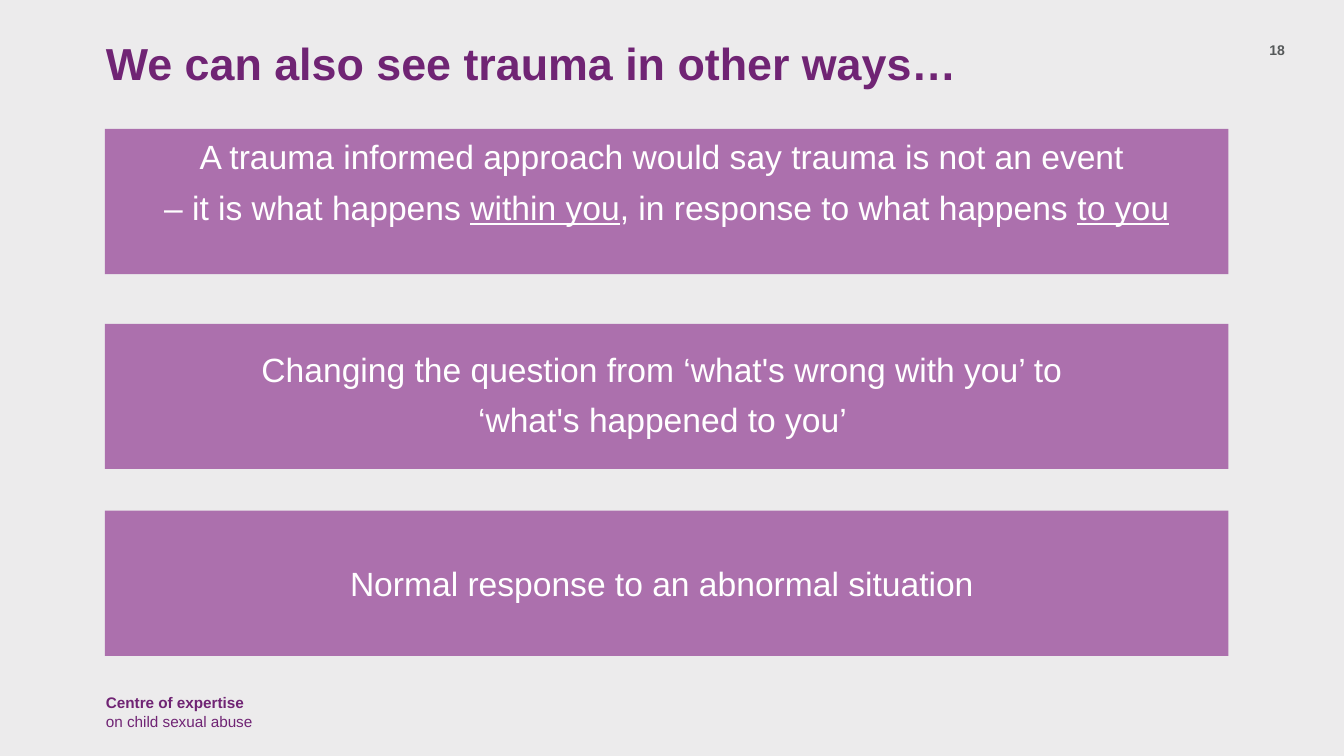
from pptx import Presentation
from pptx.dml.color import RGBColor
from pptx.enum.shapes import MSO_SHAPE
from pptx.enum.text import MSO_ANCHOR, PP_ALIGN
from pptx.util import Inches, Pt

RECT = MSO_SHAPE.RECTANGLE
TOP, MIDDLE = MSO_ANCHOR.TOP, MSO_ANCHOR.MIDDLE
LEFT, CENTER, RIGHT = PP_ALIGN.LEFT, PP_ALIGN.CENTER, PP_ALIGN.RIGHT

COLORS = {
    "background": "ECEBEC",
    "purple": "702474",
    "panel": "AC70AD",
    "grey": "555859",
    "white": "FFFFFF",
}


def rgb(name):
    return RGBColor.from_string(COLORS[name])


def add_run(p, text, size=18, color="white", bold=False, underline=False,
            break_before=False):
    if break_before:
        p.add_line_break()
    r = p.add_run()
    r.text = text
    r.font.name = "Arial"
    r.font.size = Pt(size)
    r.font.bold = bold
    r.font.underline = underline
    r.font.color.rgb = rgb(color)


class SlideBuilder:
    def __init__(self, prs):
        self.s = prs.slides.add_slide(prs.slide_layouts[6])
        self.s.background.fill.solid()
        self.s.background.fill.fore_color.rgb = rgb("background")

    def text(self, box, lines, align=LEFT, spacing=1.0, **style):
        sp = self.s.shapes.add_textbox(*map(Inches, box))
        self.fill_frame(sp.text_frame, lines, align, spacing, TOP, **style)

    def panel(self, top, lines, spacing=0.9, inset_bottom=0.05):
        sp = self.s.shapes.add_shape(
            RECT, Inches(0.78), Inches(top), Inches(8.36), Inches(1.08))
        sp.shadow.inherit = False
        sp.fill.solid()
        sp.fill.fore_color.rgb = rgb("panel")
        sp.line.fill.background()
        self.fill_frame(sp.text_frame, lines, CENTER, spacing, MIDDLE, gap=7.5)
        sp.text_frame.margin_bottom = Inches(inset_bottom)

    def fill_frame(self, tf, lines, align, spacing, anchor, gap=0, **style):
        tf.word_wrap = True
        tf.vertical_anchor = anchor
        for i, line in enumerate(lines):
            p = tf.add_paragraph() if i else tf.paragraphs[0]
            p.alignment = align
            p.line_spacing = spacing
            if i:
                p.space_before = Pt(gap)
            for text, extra in line:
                add_run(p, text, **{**style, **extra})


def main():
    prs = Presentation()
    prs.slide_width = Inches(10)
    prs.slide_height = prs.slide_width * 9 // 16
    slide = SlideBuilder(prs)
    underlined = {"underline": True}

    slide.text((0.69, 5.11, 1.79, 0.38),
               [[("Centre of expertise", {"bold": True}),
                 ("on child sexual abuse", {"break_before": True})]],
               size=8.2, color="purple")
    slide.text((9.15, 0.26, 0.51, 0.26), [[("18", {})]],
               align=RIGHT, size=7.5, color="grey", bold=True)
    slide.text((0.69, 0.26, 8.36, 0.7),
               [[("We can also see trauma in other ways…", {})]],
               spacing=0.9, size=24, color="purple", bold=True)

    slide.panel(2.41, [
        [("Changing the question from ‘what's wrong with you’ to ", {})],
        [("‘what's happened to you’ ", {})],
    ])
    slide.panel(0.96, [
        [("A trauma informed approach would say trauma is not an event ", {})],
        [("– it is what happens ", {}), ("within you", underlined),
         (", in response to what happens ", {}), ("to you", underlined)],
    ], inset_bottom=0.31)
    slide.panel(3.8, [[("Normal response to an abnormal situation ", {})]], spacing=1.0)

    prs.save("out.pptx")


if __name__ == "__main__":
    main()
